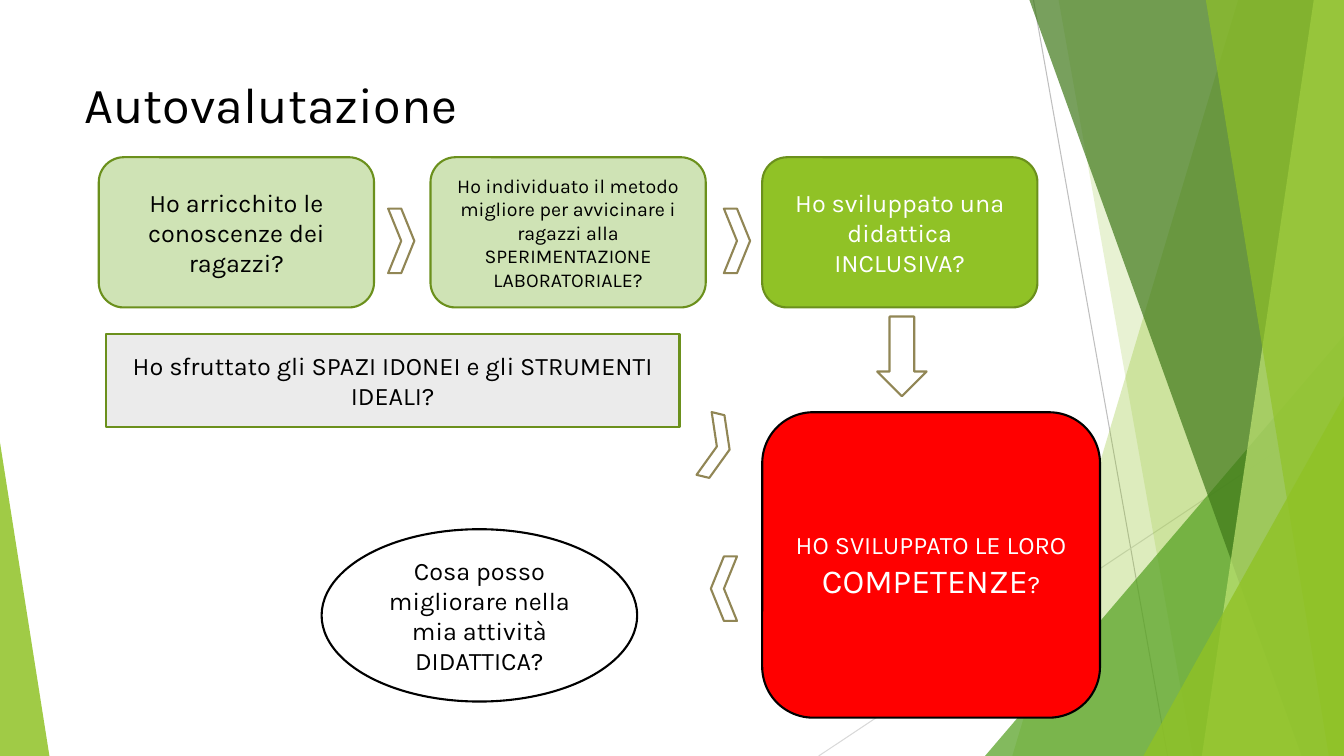
from dataclasses import dataclass

from lxml import etree
from pptx import Presentation
from pptx.dml.color import RGBColor
from pptx.enum.shapes import MSO_CONNECTOR, MSO_SHAPE
from pptx.enum.text import MSO_ANCHOR, PP_ALIGN
from pptx.oxml.ns import qn
from pptx.util import Pt

ROUNDED = MSO_SHAPE.ROUNDED_RECTANGLE
RECTANGLE = MSO_SHAPE.RECTANGLE
ELLIPSE = MSO_SHAPE.OVAL
CHEVRON = MSO_SHAPE.CHEVRON
DOWN_ARROW = MSO_SHAPE.DOWN_ARROW
TRIANGLE = MSO_SHAPE.ISOSCELES_TRIANGLE
STRAIGHT = MSO_CONNECTOR.STRAIGHT
MIDDLE = MSO_ANCHOR.MIDDLE
LEFT, CENTER = PP_ALIGN.LEFT, PP_ALIGN.CENTER

PX = 9144
WIDTH, HEIGHT = 1333, 750


@dataclass(frozen=True)
class Theme:
    font: str = "Karla"
    title: int = 36
    large: int = 24
    body: int = 18
    small: int = 14
    outline: float = 1.5
    hairline: float = 0.75
    black: str = "000000"
    white: str = "FFFFFF"
    green: str = "90C226"
    leaf: str = "54A021"
    forest: str = "3F7819"
    lime: str = "C0E474"
    pale: str = "CFE3B5"
    edge: str = "6B901C"
    gray: str = "EBEBEB"
    khaki: str = "918655"
    red: str = "FF0000"
    ray: str = "BFBFBF"
    faint_ray: str = "D9D9D9"


THEME = Theme()

TITLE = "Autovalutazione"
QUESTIONS = [
    ("Ho arricchito le conoscenze dei ragazzi?", THEME.body, THEME.pale, THEME.black),
    ("Ho individuato il metodo migliore per avvicinare i ragazzi alla "
     "SPERIMENTAZIONE LABORATORIALE?", THEME.small, THEME.pale, THEME.black),
    ("Ho sviluppato una didattica INCLUSIVA?", THEME.body, THEME.green, THEME.white),
]
TOOLS = [[("Ho sfruttato gli SPAZI IDONEI e gli STRUMENTI IDEALI?", THEME.body)]]
IMPROVE = [[("Cosa posso migliorare nella mia attività DIDATTICA?", THEME.body)]]
SKILLS = [
    [("HO SVILUPPATO LE LORO", THEME.body)],
    [("COMPETENZE", THEME.large), ("?", THEME.body)],
]

RAYS = [
    ((1025, 0), (1158, HEIGHT), THEME.ray),
    ((WIDTH, 403), (812, HEIGHT), THEME.faint_ray),
]
BANDS_BEHIND = [
    (1228, 1004, THEME.green, 30),
    (1050, 1183, THEME.green, 20),
]
BANDS_FRONT = [
    (1021, 1291, THEME.forest, 70),
    (1303, 1192, THEME.lime, 70),
    (1196, 1318, THEME.green, 65),
]
CORNER_BEHIND = (977, 333, 356, 1, THEME.leaf, 72)
CORNERS_FRONT = [
    (1134, 393, 199, 1, THEME.green, 80),
    (0, 439, 49, 0, THEME.green, 85),
]

QUESTION_LEFT, QUESTION_TOP, QUESTION_STEP = 98, 156, 329
QUESTION_SIZE = (273, 149)
CHEVRON_SIZE = (26, 64)
CHEVRONS = [(385, 207, 0), (718, 207, 0), (698, 411, 13.6), (705, 552, 180)]


def color(code):
    return RGBColor.from_string(code)


def paint(shape, fill, line=None, opacity=100):
    shape.shadow.inherit = False
    shape.fill.solid()
    shape.fill.fore_color.rgb = color(fill)
    if opacity < 100:
        tone = shape.fill._xPr.find(qn("a:solidFill"))[0]
        etree.SubElement(tone, qn("a:alpha"), val=str(opacity * 1000))
    if line:
        shape.line.color.rgb = color(line)
        shape.line.width = Pt(THEME.outline)
    else:
        shape.line.fill.background()


def write(shape, paragraphs, ink, align=CENTER):
    frame = shape.text_frame
    frame.word_wrap = True
    frame.vertical_anchor = MIDDLE
    for index, spans in enumerate(paragraphs):
        para = frame.add_paragraph() if index else frame.paragraphs[0]
        para.alignment = align
        for text, size in spans:
            span = para.add_run()
            span.text = text
            span.font.name = THEME.font
            span.font.size = Pt(size)
            span.font.color.rgb = color(ink)


def add_box(page, kind, left, top, width, height, fill, line=None, opacity=100):
    box = page.shapes.add_shape(kind, left * PX, top * PX, width * PX, height * PX)
    paint(box, fill, line, opacity)
    return box


def add_ray(page, start, end, tone):
    ray = page.shapes.add_connector(STRAIGHT, *(value * PX for value in start + end))
    ray.line.color.rgb = color(tone)
    ray.line.width = Pt(THEME.hairline)
    etree.SubElement(ray._element.spPr, qn("a:effectLst"))


def add_band(page, top_left, bottom_left, fill, opacity):
    builder = page.shapes.build_freeform(top_left, 0, scale=PX)
    builder.add_line_segments([(WIDTH, 0), (WIDTH, HEIGHT), (bottom_left, HEIGHT)], close=True)
    paint(builder.convert_to_shape(), fill, opacity=opacity)


def add_corner(page, left, top, width, apex, fill, opacity):
    corner = add_box(page, TRIANGLE, left, top, width, HEIGHT - top, fill, opacity=opacity)
    corner.adjustments[0] = apex


def add_backdrop(page):
    for ray in RAYS:
        add_ray(page, *ray)
    for band in BANDS_BEHIND:
        add_band(page, *band)
    add_corner(page, *CORNER_BEHIND)
    for band in BANDS_FRONT:
        add_band(page, *band)
    for corner in CORNERS_FRONT:
        add_corner(page, *corner)


def add_flow(page):
    for index, (text, size, fill, ink) in enumerate(QUESTIONS):
        left = QUESTION_LEFT + index * QUESTION_STEP
        question = add_box(page, ROUNDED, left, QUESTION_TOP, *QUESTION_SIZE, fill, THEME.edge)
        write(question, [[(text, size)]], ink)
    tools = add_box(page, RECTANGLE, 105, 331, 569, 93, THEME.gray, THEME.edge)
    write(tools, TOOLS, THEME.black)
    for left, top, angle in CHEVRONS:
        chevron = add_box(page, CHEVRON, left, top, *CHEVRON_SIZE, THEME.white, THEME.khaki)
        chevron.rotation = angle
    add_box(page, DOWN_ARROW, 870, 314, 49, 79, THEME.white, THEME.khaki)
    improve = add_box(page, ELLIPSE, 319, 525, 313, 171, THEME.white, THEME.black)
    write(improve, IMPROVE, THEME.black)
    skills = add_box(page, ROUNDED, 756, 409, 335, 303, THEME.red, THEME.black)
    write(skills, SKILLS, THEME.white)


def main():
    deck = Presentation()
    deck.slide_width, deck.slide_height = WIDTH * PX, HEIGHT * PX
    page = deck.slides.add_slide(deck.slide_layouts[6])
    add_backdrop(page)
    title = page.shapes.add_textbox(74 * PX, 67 * PX, 940 * PX, 71 * PX)
    write(title, [[(TITLE, THEME.title)]], THEME.black, LEFT)
    add_flow(page)
    deck.save("out.pptx")


if __name__ == "__main__":
    main()
